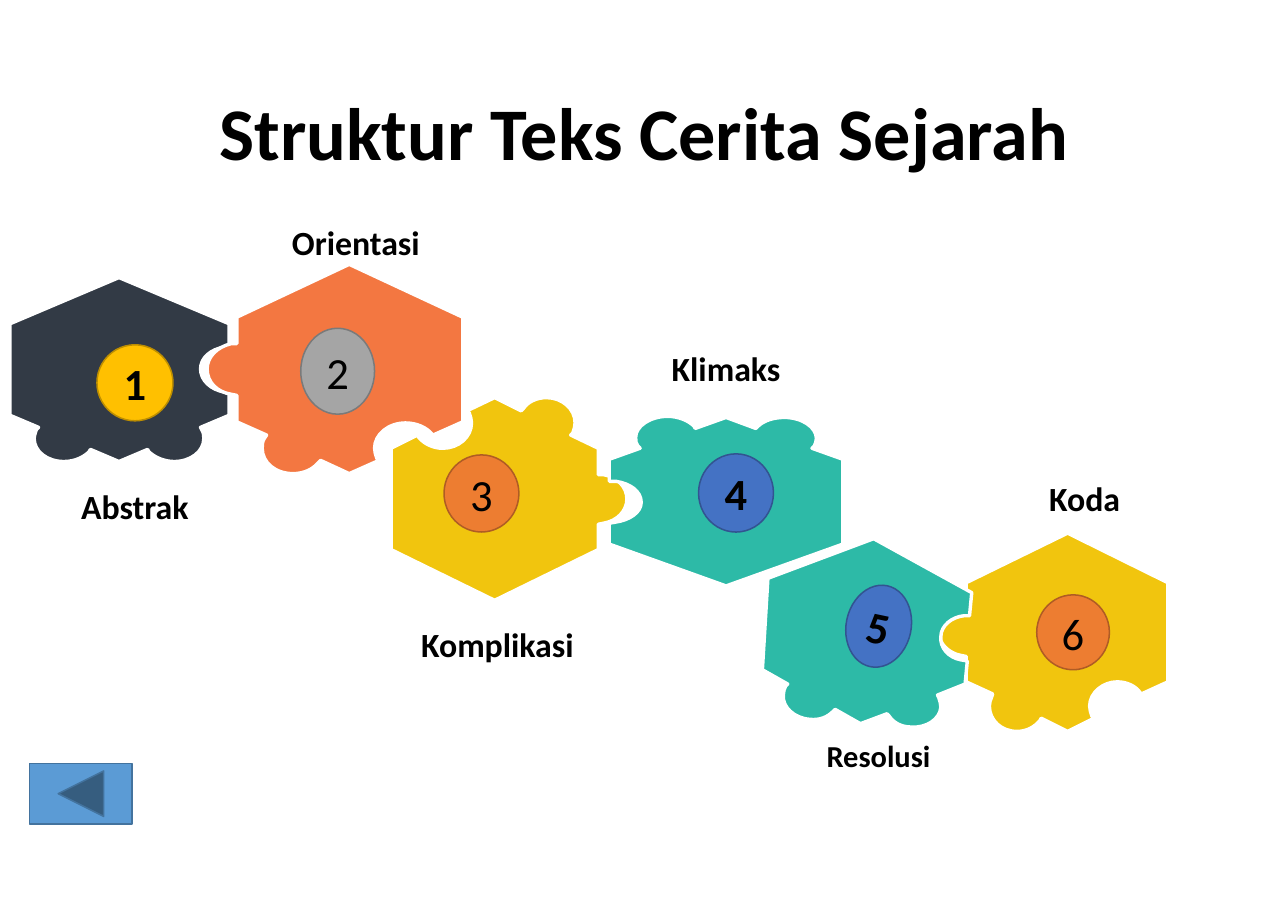
from lxml import etree
from pptx import Presentation
from pptx.dml.color import RGBColor
from pptx.enum.shapes import MSO_SHAPE
from pptx.enum.text import MSO_ANCHOR, MSO_AUTO_SIZE, PP_ALIGN
from pptx.oxml.ns import qn
from pptx.util import Pt

PX = 9144  # EMU in one px, 100 px to the inch
color = RGBColor.from_string

# Outlines: a pair is a corner, six numbers are a Bézier curve
# (two control points, then the end point).
ABSTRAK = [
    (108, 252), (208, 294), (208, 315), (204, 315),
    (191, 317, 182, 325, 182, 335), (182, 345, 191, 354, 204, 356),
    (208, 356), (208, 377), (182, 388), (183, 390),
    (185, 393, 185, 396, 185, 398), (185, 410, 173, 419, 158, 419),
    (149, 419, 140, 415, 135, 410), (134, 408), (108, 419), (82, 408), (81, 410),
    (76, 415, 68, 419, 58, 419), (43, 419, 31, 410, 31, 398),
    (31, 396, 32, 393, 33, 390), (35, 388), (9, 377), (9, 294)]
ORIENTASI = [
    (317, 240), (420, 288), (420, 383), (393, 395), (392, 394),
    (387, 388, 378, 384, 368, 384), (353, 384, 340, 394, 340, 407),
    (340, 410, 341, 413, 342, 416), (344, 418), (317, 430), (291, 418), (289, 420),
    (284, 426, 276, 430, 266, 430), (250, 430, 238, 420, 238, 407),
    (238, 404, 238, 401, 240, 398), (242, 395), (215, 383), (215, 359), (210, 358),
    (197, 356, 188, 347, 188, 335), (188, 324, 197, 315, 210, 312),
    (215, 312), (215, 288)]
KOMPLIKASI = [
    (496, 361), (510, 361, 522, 371, 522, 384), (522, 387, 521, 390, 520, 393),
    (518, 395), (543, 407), (543, 431), (548, 431),
    (560, 433, 569, 442, 569, 453), (569, 464, 560, 473, 548, 475),
    (543, 476), (543, 499), (449, 545), (355, 499), (355, 407), (379, 395), (380, 397),
    (385, 403, 393, 407, 402, 407), (416, 407, 428, 397, 428, 384),
    (428, 381, 427, 378, 426, 375), (424, 373), (449, 361), (473, 373), (475, 371),
    (479, 365, 487, 361, 496, 361)]
KLIMAKS = [
    (606, 378), (616, 378, 625, 382, 630, 387), (631, 389), (659, 379), (686, 389),
    (688, 387), (693, 382, 702, 379, 712, 379), (728, 379, 741, 388, 741, 398),
    (741, 401, 740, 403, 739, 405), (737, 407), (765, 417), (765, 494), (659, 532),
    (553, 494), (553, 475), (559, 474),
    (572, 472, 582, 465, 582, 456), (582, 446, 572, 439, 559, 437),
    (553, 437), (553, 417), (581, 407), (579, 405),
    (577, 403, 577, 400, 577, 397), (577, 387, 590, 378, 606, 378)]
KODA = [
    (923, 664), (909, 664, 898, 654, 898, 641), (898, 638, 899, 635, 900, 633),
    (901, 630), (877, 619), (877, 596), (872, 595),
    (861, 593, 852, 584, 852, 574), (852, 563, 861, 554, 872, 552),
    (877, 552), (877, 529), (969, 484), (1060, 529), (1060, 619), (1036, 630), (1035, 629),
    (1031, 623, 1023, 619, 1014, 619), (1001, 619, 989, 629, 989, 641),
    (989, 644, 990, 647, 991, 650), (993, 652), (969, 664), (945, 652), (944, 654),
    (939, 660, 932, 664, 923, 664)]
RESOLUSI = [
    (827, 660), (818, 660, 811, 656, 807, 650), (805, 648), (781, 657), (758, 644),
    (756, 646), (751, 651, 744, 654, 735, 653), (721, 652, 710, 642, 711, 631),
    (711, 628, 712, 625, 713, 623), (715, 621), (692, 608), (697, 525), (793, 489),
    (882, 538), (880, 559), (875, 559),
    (864, 560, 854, 568, 854, 578), (853, 588, 861, 597, 872, 599),
    (878, 600), (876, 621), (851, 631), (852, 633),
    (853, 636, 854, 639, 854, 642), (853, 653, 841, 661, 827, 660)]

# outline, fill, number, bold, number disc (left, top, width, height), turn, fill, line
PIECES = [
    (ABSTRAK, "323A45", "1", True, (88, 313, 69, 69), 0, "FFC000", "BD8E00"),
    (ORIENTASI, "F37741", "2", False, (273, 298, 67, 78), 0, "A5A5A5", "7A7A7A"),
    (KOMPLIKASI, "F1C50E", "3", False, (403, 413, 68, 70), 0, "ED7D31", "AF5C24"),
    (KLIMAKS, "2DBAA7", "4", True, (634, 412, 68, 71), 0, "4472C4", "325491"),
    (KODA, "F1C50E", "6", False, (941, 540, 66, 68), 0, "ED7D31", "AF5C24"),
    (RESOLUSI, "2DBAA7", "5", True, (768, 531, 59, 75), 12, "4472C4", "325491"),
]

# text, size, box (left, top, width, height)
LABELS = [
    ("Abstrak", 22.1, (56, 436, 133, 47)),
    ("Orientasi", 22.1, (243, 196, 160, 47)),
    ("Komplikasi", 22.1, (345, 561, 213, 47)),
    ("Klimaks", 22.1, (569, 311, 180, 47)),
    ("Resolusi", 19.9, (721, 664, 153, 43)),
    ("Koda", 22.1, (866, 429, 237, 47)),
]


def paint(shape, fill, line, weight):
    shape.shadow.inherit = False
    shape.fill.solid()
    shape.fill.fore_color.rgb = color(fill)
    shape.line.color.rgb = color(line)
    shape.line.width = Pt(weight)


def write(shape, text, size, bold, anchor):
    """Set one centred line of text and return its paragraph."""
    frame = shape.text_frame
    frame.word_wrap = True
    frame.vertical_anchor = anchor
    para = frame.paragraphs[0]
    para.alignment = PP_ALIGN.CENTER
    span = para.add_run()
    span.text = text
    span.font.name = "Calibri"
    span.font.size = Pt(size)
    span.font.bold = bold
    span.font.color.rgb = color("000000")
    return para


deck = Presentation()
deck.slide_width, deck.slide_height = 1169 * PX, 827 * PX
page = deck.slides.add_slide(deck.slide_layouts[6])

title = page.shapes.add_textbox(80 * PX, 44 * PX, 1009 * PX, 160 * PX)
title_para = write(title, "Struktur Teks Cerita Sejarah", 48.5, True, MSO_ANCHOR.MIDDLE)
title_para.line_spacing = 0.9

for outline, fill, number, bold, disc_box, turn, disc_fill, disc_line in PIECES:
    group = page.shapes.add_group_shape()
    corners = [part[-2:] for part in outline]
    left = min(x for x, y in corners)
    top = min(y for x, y in corners)
    builder = group.shapes.build_freeform(*corners[0], scale=PX)
    builder.add_line_segments(corners[1:], close=outline[-1][-2:] != outline[0])
    piece = builder.convert_to_shape()
    segments = list(piece.element.iter(qn("a:lnTo")))
    for part, segment in zip(outline[1:], segments):
        if len(part) == 6:
            curve = etree.Element(qn("a:cubicBezTo"))
            for x, y in zip(part[::2], part[1::2]):
                etree.SubElement(curve, qn("a:pt"), x=str(x - left), y=str(y - top))
            segment.getparent().replace(segment, curve)
    paint(piece, fill, "FFFFFF", 2.25)

    disc = group.shapes.add_shape(MSO_SHAPE.OVAL, *(side * PX for side in disc_box))
    disc.rotation = turn
    paint(disc, disc_fill, disc_line, 1)
    write(disc, number, 29.1, bold, MSO_ANCHOR.MIDDLE)

for text, size, label_box in LABELS:
    label = page.shapes.add_textbox(*(side * PX for side in label_box))
    write(label, text, size, True, MSO_ANCHOR.TOP)
    label.text_frame.auto_size = MSO_AUTO_SIZE.SHAPE_TO_FIT_TEXT

back_button = page.shapes.add_shape(
    MSO_SHAPE.ACTION_BUTTON_BACK_OR_PREVIOUS, 27 * PX, 693 * PX, 93 * PX, 55 * PX)
paint(back_button, "5B9BD5", "43739E", 1)

deck.save("out.pptx")
